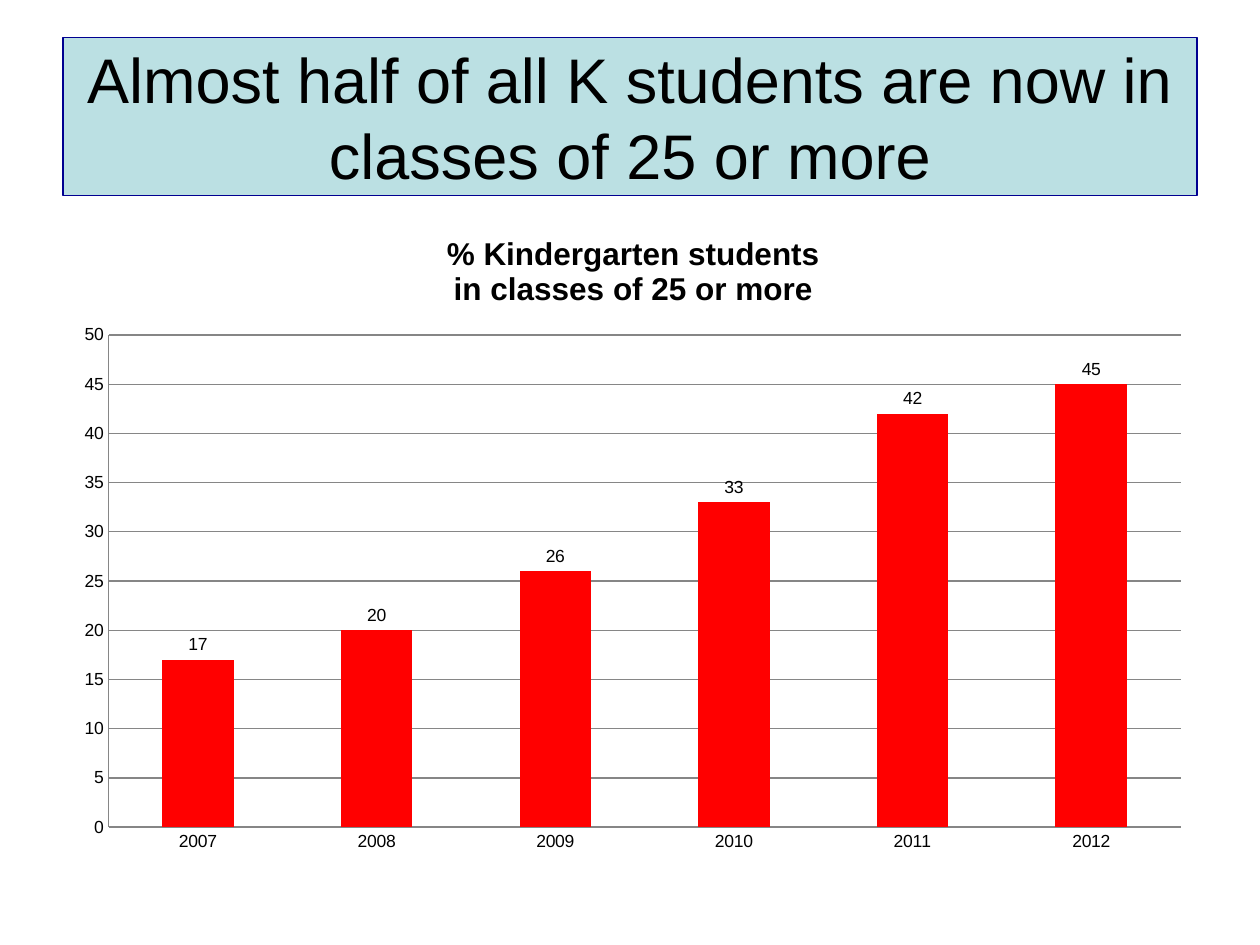
from lxml import etree
from pptx import Presentation
from pptx.chart.data import CategoryChartData
from pptx.dml.color import RGBColor
from pptx.enum.chart import XL_CHART_TYPE, XL_LABEL_POSITION, XL_TICK_MARK
from pptx.enum.text import MSO_ANCHOR, MSO_AUTO_SIZE, PP_ALIGN
from pptx.oxml.ns import qn
from pptx.util import Cm, Pt

COLORS = {"text": "000000", "panel": "BBE0E3", "border": "000090",
          "bar": "FF0000", "grid": "868686"}
FONT = "Arial"


def color(name):
    return RGBColor.from_string(COLORS[name])


def style(font, size, bold=False):
    font.name = FONT
    font.size = Pt(size)
    font.bold = bold
    font.color.rgb = color("text")


def write(frame, text, size, bold=False):
    for i, line in enumerate(text.split("\n")):
        para = frame.paragraphs[0] if i == 0 else frame.add_paragraph()
        para.alignment = PP_ALIGN.CENTER
        run = para.add_run()
        run.text = line
        style(run.font, size, bold)


class Page:
    def __init__(self, deck):
        self.slide = deck.slides.add_slide(deck.slide_layouts[5])

    def title(self, text, box):
        shape = self.slide.shapes.title
        shape.left, shape.top, shape.width, shape.height = map(Cm, box)
        shape.fill.solid()
        shape.fill.fore_color.rgb = color("panel")
        shape.line.color.rgb = color("border")
        shape.line.width = Pt(0.75)
        frame = shape.text_frame
        frame.word_wrap = True
        frame.auto_size = MSO_AUTO_SIZE.NONE
        frame.vertical_anchor = MSO_ANCHOR.MIDDLE
        write(frame, text, size=36)

    def columns(self, heading, years, values, box, area):
        data = CategoryChartData(number_format="0")
        data.categories = years
        data.add_series("Series 1", values)
        chart = self.slide.shapes.add_chart(
            XL_CHART_TYPE.COLUMN_CLUSTERED, *map(Cm, box), data).chart
        style(chart.font, 10)
        chart.has_legend = False
        chart.has_title = True
        write(chart.chart_title.text_frame, heading, size=18, bold=True)
        chart.chart_title.include_in_layout = False

        plot = chart.plots[0]
        plot.gap_width = 150
        plot.vary_by_categories = False
        fill = plot.series[0].format.fill
        fill.solid()
        fill.fore_color.rgb = color("bar")
        plot.has_data_labels = True
        labels = plot.data_labels
        labels.show_value = True
        labels.position = XL_LABEL_POSITION.OUTSIDE_END
        style(labels.font, 10)

        axis = chart.value_axis
        axis.minimum_scale, axis.maximum_scale, axis.major_unit = 0, 50, 5
        axis.has_major_gridlines = True
        axis.tick_labels.number_format = "0"
        axis.tick_labels.number_format_is_linked = False
        for item in (chart.category_axis, axis):
            item.major_tick_mark = item.minor_tick_mark = XL_TICK_MARK.NONE
            item.format.line.color.rgb = color("grid")
        axis.major_gridlines.format.line.color.rgb = color("grid")
        self.place(chart, area)

    def place(self, chart, area):
        root = chart.element.find(".//" + qn("c:plotArea"))
        for old in root.findall(qn("c:layout")):
            root.remove(old)
        layout = etree.Element(qn("c:layout"))
        root.insert(0, layout)
        manual = etree.SubElement(layout, qn("c:manualLayout"))
        rules = [("layoutTarget", "inner"), ("xMode", "edge"), ("yMode", "edge")]
        for tag, value in rules + list(zip("xywh", area)):
            etree.SubElement(manual, qn("c:" + tag)).set("val", str(value))


def main():
    deck = Presentation()
    deck.slide_width, deck.slide_height = Cm(25.4), Cm(19.05)
    page = Page(deck)
    page.title("Almost half of all K students are now in classes of 25 or more",
               box=(1.27, 0.76, 22.86, 3.18))
    page.columns("% Kindergarten students\nin classes of 25 or more",
                 [str(year) for year in range(2007, 2013)],
                 (17, 20, 26, 33, 42, 45),
                 box=(1.27, 4.24, 22.99, 13.23),
                 area=(0.04, 0.19, 0.94, 0.75))
    deck.save("out.pptx")


if __name__ == "__main__":
    main()
